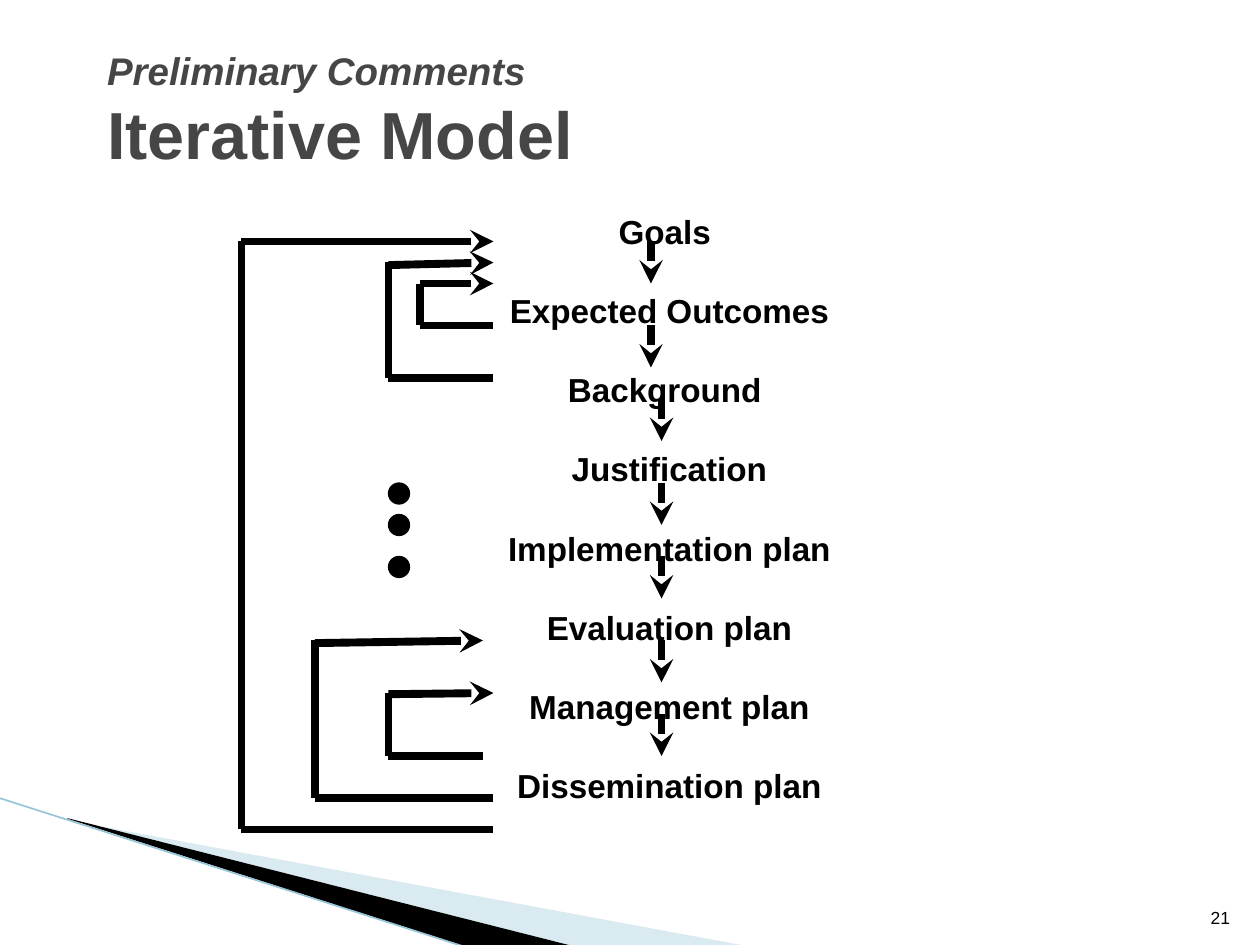
from lxml.etree import SubElement
from pptx import Presentation
from pptx.dml.color import RGBColor
from pptx.enum.shapes import MSO_CONNECTOR, MSO_SHAPE
from pptx.enum.text import MSO_ANCHOR, MSO_AUTO_SIZE, PP_ALIGN
from pptx.oxml.ns import qn
from pptx.util import Pt

COLORS = {
    "ink": "000000",
    "title": "464646",
    "pale_wedge": "A0CBDC",
    "edge": "97C5D8",
}
STEPS = ["Goals ", "Expected Outcomes", "Background ", "Justification",
         "Implementation plan", "Evaluation plan", "Management plan",
         "Dissemination plan"]


def color(name):
    return RGBColor.from_string(COLORS[name])


def add_text(paragraph, text, size, ink="ink", bold=False, italic=False):
    run = paragraph.add_run()
    run.text = text
    font = run.font
    font.name, font.size = "Arial", Pt(size)
    font.bold, font.italic = bold, italic
    font.color.rgb = color(ink)


def place(shape, left, top, width, height, anchor=MSO_ANCHOR.TOP):
    """Move a text shape and return its text frame."""
    shape.left, shape.top = Pt(left), Pt(top)
    shape.width, shape.height = Pt(width), Pt(height)
    frame = shape.text_frame
    frame.word_wrap = True
    frame.auto_size = MSO_AUTO_SIZE.NONE
    frame.vertical_anchor = anchor
    return frame


def add_line(slide, start, end, ink="ink", width=4.5, arrow=False):
    line = slide.shapes.add_connector(
        MSO_CONNECTOR.STRAIGHT, *(Pt(value) for value in (*start, *end)))
    line.line.color.rgb = color(ink)
    line.line.width = Pt(width)
    properties = line._element.spPr
    if arrow:
        SubElement(properties.find(qn("a:ln")), qn("a:tailEnd"), type="stealth")
    SubElement(properties, qn("a:effectLst"))


def add_wedge(slide, points, ink, opacity=100):
    corners = [(Pt(x), Pt(y)) for x, y in points]
    builder = slide.shapes.build_freeform(*corners[0])
    builder.add_line_segments(corners[1:], close=True)
    wedge = builder.convert_to_shape()
    wedge.shadow.inherit = False
    wedge.line.fill.background()
    wedge.fill.solid()
    wedge.fill.fore_color.rgb = color(ink)
    if opacity < 100:
        fill_color = wedge._element.spPr.find(qn("a:solidFill"))[0]
        SubElement(fill_color, qn("a:alpha"), val=str(opacity * 1000))


def add_corner_decoration(slide, left, top):
    def shift(*points):
        return [(left + x, top + y) for x, y in points]

    add_wedge(slide, shift((40, 13), (429, 85), (329, 85), (40, 12)),
              "pale_wedge", opacity=40)
    add_wedge(slide, shift((38.5, 11.5), (329, 85), (268, 85.5), (39, 12)), "ink")
    add_line(slide, *shift((-0.5, 0), (267, 85.5)), ink="edge", width=0.95)


def add_title(slide, left, top, width, height):
    frame = place(slide.shapes.title, left, top, width, height, MSO_ANCHOR.MIDDLE)
    paragraph = frame.paragraphs[0]
    paragraph.alignment = PP_ALIGN.LEFT
    add_text(paragraph, "Preliminary Comments", 22, "title", bold=True, italic=True)
    paragraph.add_line_break()
    add_text(paragraph, "Iterative Model", 38, "title", bold=True)


def add_steps(slide, left, top, width, height):
    frame = place(slide.placeholders[1], left, top, width, height)
    for index, step in enumerate(STEPS):
        paragraph = frame.add_paragraph() if index else frame.paragraphs[0]
        properties = paragraph._p.get_or_add_pPr()
        properties.set("marL", str(Pt(29)))
        properties.set("indent", str(Pt(-20)))
        SubElement(properties, qn("a:buNone"))
        paragraph.alignment = PP_ALIGN.CENTER
        paragraph.line_spacing = 0.8
        paragraph.space_before = Pt(27 if index else 0)
        add_text(paragraph, step, 19, bold=True)


def add_step_arrows(slide, left, top):
    """Draw the short arrows between steps; the first two stand further left."""
    for index, drop in enumerate((0, 48, 90, 138, 180, 228, 270)):
        x = left if index < 2 else left + 6
        add_line(slide, (x, top + drop), (x, top + drop + 24), arrow=True)


def add_feedback_loops(slide, left, top):
    """Draw each loop as an arrow back to a step, a side and a foot."""
    loops = [  # side, head, foot, arrow end, foot end, slant of the arrow
        (0, 0, 336, 144, 144, 0),
        (42, 228, 318, 138, 144, 1.5),
        (84, 258, 294, 144, 138, 0.7),
        (102, 24, 48, 144, 144, 0),
        (84, 12, 78, 144, 144, 1.5),
    ]
    for side, head, foot, arrow_end, foot_end, slant in loops:
        x, head_y, foot_y = left + side, top + head, top + foot
        add_line(slide, (x, head_y + slant), (left + arrow_end, head_y), arrow=True)
        add_line(slide, (x, head_y), (x, foot_y))
        add_line(slide, (x, foot_y), (left + foot_end, foot_y))


def add_ellipsis(slide, left, top, size=12):
    for drop in (0, 18, 42):
        dot = slide.shapes.add_shape(
            MSO_SHAPE.OVAL, Pt(left), Pt(top + drop), Pt(size), Pt(size))
        dot.shadow.inherit = False
        dot.fill.solid()
        dot.fill.fore_color.rgb = color("ink")
        dot.line.color.rgb = color("ink")
        dot.line.width = Pt(0.75)


def add_page_number(slide, left, top, size):
    box = slide.shapes.add_textbox(0, 0, 0, 0)
    frame = place(box, left, top, size, size, MSO_ANCHOR.BOTTOM)
    paragraph = frame.paragraphs[0]
    paragraph.alignment = PP_ALIGN.RIGHT
    add_text(paragraph, "21", 10)


def main():
    presentation = Presentation()
    presentation.slide_width, presentation.slide_height = Pt(720), Pt(540)
    slide = presentation.slides.add_slide(presentation.slide_layouts[1])
    add_corner_decoration(slide, 0, 456)
    add_steps(slide, 72, 121.5, 612, 390)
    add_page_number(slide, 681, 505, 29)
    add_title(slide, 54, 18, 612, 90)
    add_step_arrows(slide, 372, 138)
    add_feedback_loops(slide, 138, 138)
    add_ellipsis(slide, 222, 276)
    presentation.save("out.pptx")


if __name__ == "__main__":
    main()
